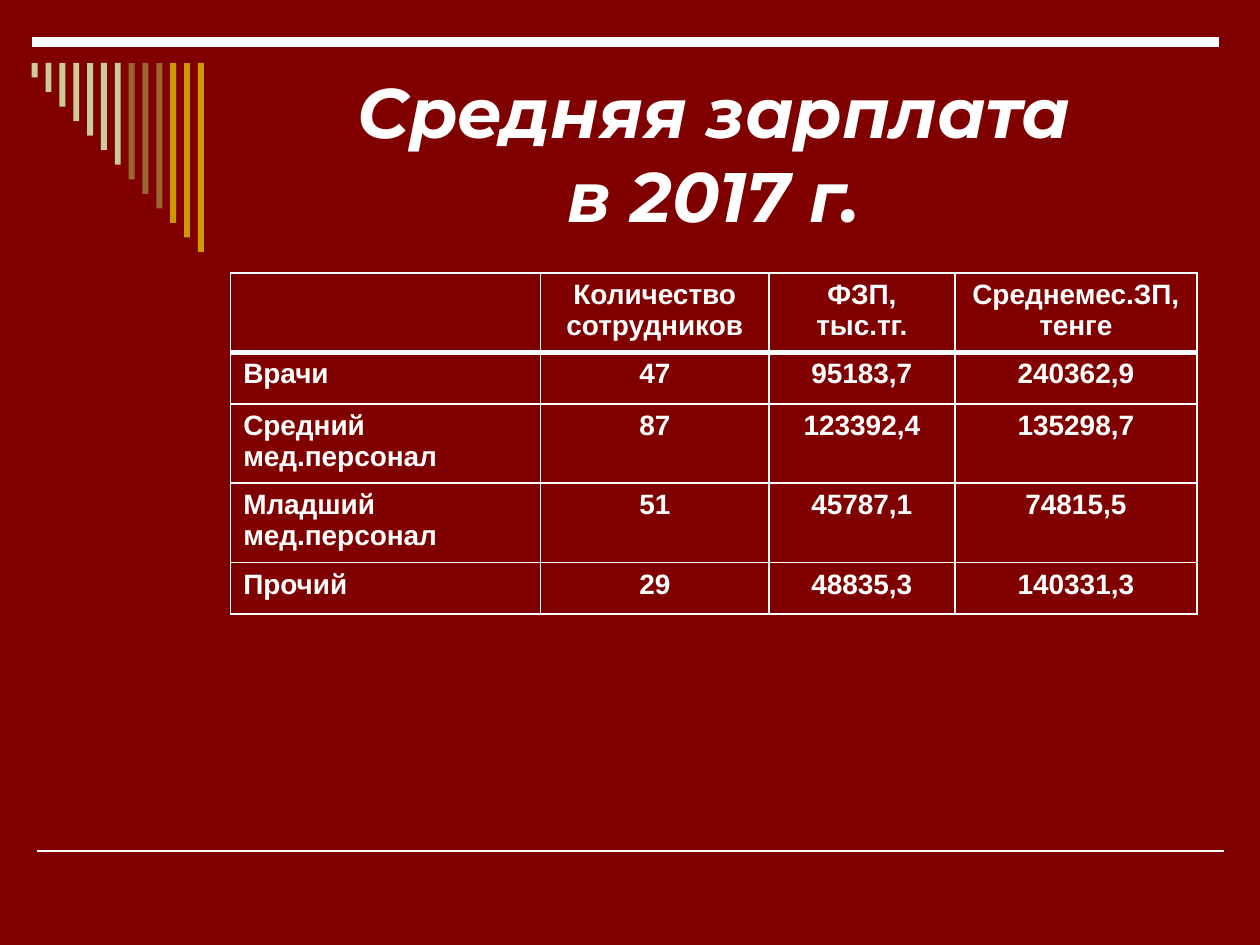
from lxml import etree
from pptx import Presentation
from pptx.dml.color import RGBColor
from pptx.enum.shapes import MSO_CONNECTOR, MSO_SHAPE
from pptx.enum.text import MSO_ANCHOR, MSO_AUTO_SIZE, PP_ALIGN
from pptx.oxml.ns import qn
from pptx.util import Cm, Pt

STRAIGHT = MSO_CONNECTOR.STRAIGHT
RECTANGLE = MSO_SHAPE.RECTANGLE
MIDDLE = MSO_ANCHOR.MIDDLE
NO_AUTOFIT = MSO_AUTO_SIZE.NONE
LEFT, CENTER = PP_ALIGN.LEFT, PP_ALIGN.CENTER

BACKGROUND = "800000"
WHITE = "FFFFFF"
BAR_COLORS = ["CCCC99"] * 7 + ["996633"] * 3 + ["CC9900"] * 3
COLUMN_WIDTHS = [6.25, 4.6, 3.75, 4.88]
ROW_HEIGHTS = [1.6, 1.04, 1.6, 1.6, 1.04]
SALARIES = [
    ["", "Количество сотрудников", "ФЗП, тыс.тг.", "Среднемес.ЗП, тенге"],
    ["Врачи", "47", "95183,7", "240362,9"],
    ["Средний мед.персонал", "87", "123392,4", "135298,7"],
    ["Младший мед.персонал", "51", "45787,1", "74815,5"],
    ["Прочий", "29", "48835,3", "140331,3"],
]


def set_fill(fill, color):
    fill.solid()
    fill.fore_color.rgb = RGBColor.from_string(color)


def write_text(frame, text, size, font, align=LEFT, bold=True, italic=False, color=WHITE):
    para = frame.paragraphs[0]
    para.text = text
    para.alignment = align
    for span in para.runs:
        span.font.size = Pt(size)
        span.font.name = font
        span.font.bold = bold
        span.font.italic = italic
        span.font.color.rgb = RGBColor.from_string(color)


def add_rule(page, left, top, width, weight):
    rule = page.shapes.add_connector(
        STRAIGHT, Cm(left), Cm(top), Cm(left + width), Cm(top)
    )
    rule.line.width = Pt(weight)
    rule.line.color.rgb = RGBColor.from_string(WHITE)
    etree.SubElement(rule.element.spPr, qn("a:effectLst"))


def add_bars(page, left, top, width, height):
    group = page.shapes.add_group_shape()
    count = len(BAR_COLORS)
    bar_width = 0.12
    pitch = (width - bar_width) / (count - 1)
    for index, color in enumerate(BAR_COLORS):
        bar = group.shapes.add_shape(
            RECTANGLE,
            Cm(left + index * pitch),
            Cm(top),
            Cm(bar_width),
            Cm(height * (index + 1) / count),
        )
        bar.shadow.inherit = False
        set_fill(bar.fill, color)
        bar.line.fill.background()


def place_title(page, left, top, width, height):
    title = page.shapes.title
    title.left, title.top = Cm(left), Cm(top)
    title.width, title.height = Cm(width), Cm(height)
    frame = title.text_frame
    frame.word_wrap = True
    frame.auto_size = NO_AUTOFIT
    frame.vertical_anchor = MIDDLE
    write_text(frame, "Средняя зарплата\nв 2017 г.", 40, "Montserrat",
               align=CENTER, italic=True)


def set_borders(cell, weights):
    properties = cell._tc.get_or_add_tcPr()
    for side, weight in weights.items():
        border = etree.SubElement(properties, qn(f"a:ln{side}"), w=str(Pt(weight)))
        fill = etree.SubElement(border, qn("a:solidFill"))
        etree.SubElement(fill, qn("a:srgbClr"), val=WHITE)


def add_salary_table(page, left, top, width, height):
    table = page.shapes.add_table(
        len(ROW_HEIGHTS), len(COLUMN_WIDTHS), Cm(left), Cm(top), Cm(width), Cm(height)
    ).table
    for column, share in zip(table.columns, COLUMN_WIDTHS):
        column.width = Cm(width * share / sum(COLUMN_WIDTHS))
    for row, share in zip(table.rows, ROW_HEIGHTS):
        row.height = Cm(height * share / sum(ROW_HEIGHTS))
    for row_index, values in enumerate(SALARIES):
        for column_index, value in enumerate(values):
            cell = table.cell(row_index, column_index)
            set_borders(cell, {
                "L": 1,
                "R": 1,
                "T": 3 if row_index == 1 else 1,
                "B": 3 if row_index == 0 else 1,
            })
            set_fill(cell.fill, BACKGROUND)
            if value:
                write_text(cell.text_frame, value, 16, "Arial",
                           align=CENTER if column_index else LEFT)


def main():
    deck = Presentation()
    deck.slide_width, deck.slide_height = Cm(25.4), Cm(19.05)
    page = deck.slides.add_slide(deck.slide_layouts[5])
    set_fill(page.background.fill, BACKGROUND)
    add_rule(page, 0.74, 17.15, 23.93, 1)
    add_rule(page, 0.64, 0.85, 23.93, 6)
    add_bars(page, 0.64, 1.27, 3.47, 3.81)
    place_title(page, 4.65, 1.27, 19.48, 3.6)
    add_salary_table(page, 4.65, 5.5, 19.48, 6.88)
    deck.save("out.pptx")


if __name__ == "__main__":
    main()
